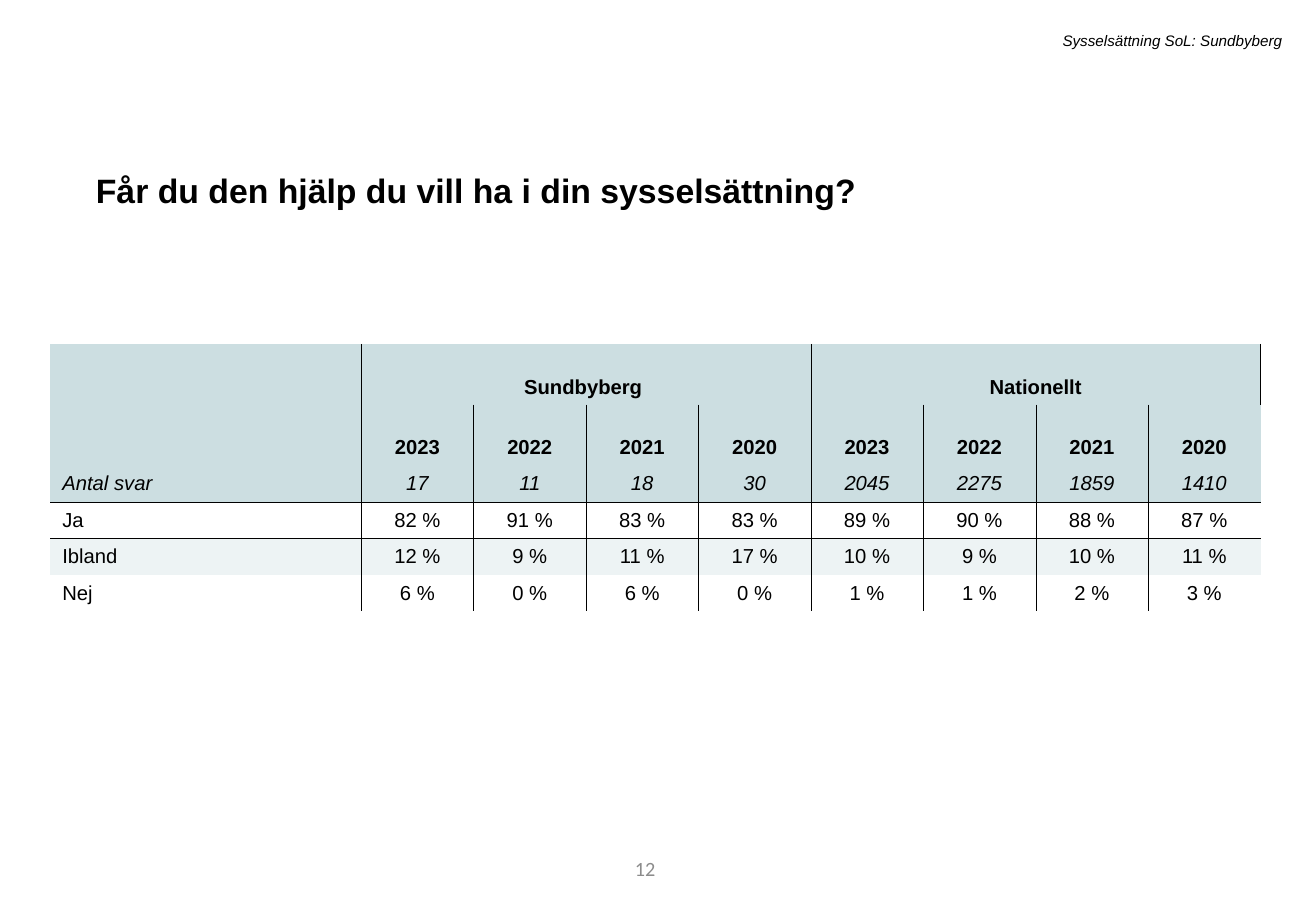
import pptx
import pptx.dml.color
import pptx.enum.text
import pptx.oxml.ns
import pptx.util
from lxml import etree

Cm, Pt = pptx.util.Cm, pptx.util.Pt
RGBColor = pptx.dml.color.RGBColor
Align = pptx.enum.text.PP_ALIGN
Anchor = pptx.enum.text.MSO_ANCHOR
AutoSize = pptx.enum.text.MSO_AUTO_SIZE
qn = pptx.oxml.ns.qn

BLACK = RGBColor(0x00, 0x00, 0x00)
GREY = RGBColor(0x8C, 0x8C, 0x8C)
HEADER_FILL = RGBColor(0xCC, 0xDE, 0xE1)
BAND_FILL = RGBColor(0xED, 0xF3, 0xF4)
PLAIN_STYLE = "{2D5ABB26-0587-4C30-8999-92F81FD0307C}"

SURVEY = "Sysselsättning SoL: Sundbyberg"
QUESTION = "Får du den hjälp du vill ha i din sysselsättning?"
PAGE = "12"
REGIONS = ["Sundbyberg ", "Nationellt"]
YEARS = ["2023", "2022", "2021", "2020"]
RESPONSES = ["Antal svar", "17", "11", "18", "30", "2045", "2275", "1859", "1410"]
ANSWERS = [
    ("Ja", [82, 91, 83, 83, 89, 90, 88, 87]),
    ("Ibland", [12, 9, 11, 17, 10, 9, 10, 11]),
    ("Nej", [6, 0, 6, 0, 1, 1, 2, 3]),
]

region_row = [""]
for region in REGIONS:
    region_row += [region] + [""] * (len(YEARS) - 1)
ROWS = [region_row, [""] + YEARS * len(REGIONS), RESPONSES]
ROWS += [[answer] + [f"{share} %" for share in shares] for answer, shares in ANSWERS]
RESPONSE_ROW = 2
LAST_COLUMN = len(RESPONSES) - 1
ROW_HEIGHTS = [1.27, 1.27] + [0.76] * (len(ROWS) - 2)
COLUMN_WIDTHS = [6.5] + [2.35] * LAST_COLUMN


def write(frame, text, size, align, font="Arial", color=BLACK, bold=False, italic=False):
    frame.text = text
    line = frame.paragraphs[0]
    line.alignment = align
    for run in line.runs:
        run.font.name = font
        run.font.size = Pt(size)
        run.font.color.rgb = color
        run.font.bold = bold
        run.font.italic = italic
    return line


def add_note(slide, place, text, size, anchor, **look):
    frame = slide.shapes.add_textbox(*map(Cm, place)).text_frame
    frame.word_wrap = True
    frame.vertical_anchor = anchor
    write(frame, text, size, Align.RIGHT, **look)


def draw_borders(cell, sides):
    properties = cell._tc.get_or_add_tcPr()
    for side in sides:
        border = etree.SubElement(properties, qn(f"a:ln{side}"), w=str(Pt(0.25)))
        fill = etree.SubElement(border, qn("a:solidFill"))
        etree.SubElement(fill, qn("a:srgbClr"), val=str(BLACK))


def border_sides(row, column):
    sides = ""
    if column > 0:
        sides += "L"
    if column < LAST_COLUMN or row == 0:
        sides += "R"
    if row == RESPONSE_ROW + 1:
        sides += "T"
    if row == RESPONSE_ROW:
        sides += "B"
    return sides


def fill_cell(cell, row, column):
    if not cell.is_spanned:
        draw_borders(cell, border_sides(row, column))
    if row <= RESPONSE_ROW:
        cell.fill.solid()
        cell.fill.fore_color.rgb = HEADER_FILL
    elif (row - RESPONSE_ROW) % 2 == 0:
        cell.fill.solid()
        cell.fill.fore_color.rgb = BAND_FILL
    else:
        cell.fill.background()
    cell.vertical_anchor = Anchor.BOTTOM if row < RESPONSE_ROW else Anchor.MIDDLE
    if ROWS[row][column]:
        write(cell.text_frame, ROWS[row][column], 12,
              Align.CENTER if column else Align.LEFT,
              bold=row < RESPONSE_ROW, italic=row == RESPONSE_ROW)


def add_results(slide):
    results = slide.shapes.add_table(
        len(ROWS), len(COLUMN_WIDTHS), Cm(1.05), Cm(7.19),
        Cm(sum(COLUMN_WIDTHS)), Cm(sum(ROW_HEIGHTS))).table
    results.first_row = results.horz_banding = False
    results._tbl.tblPr.find(qn("a:tableStyleId")).text = PLAIN_STYLE
    for column, width in zip(results.columns, COLUMN_WIDTHS):
        column.width = Cm(width)
    for row, height in zip(results.rows, ROW_HEIGHTS):
        row.height = Cm(height)
    for index in range(len(REGIONS)):
        first = 1 + index * len(YEARS)
        results.cell(0, first).merge(results.cell(0, first + len(YEARS) - 1))
    for row in range(len(ROWS)):
        for column in range(len(COLUMN_WIDTHS)):
            fill_cell(results.cell(row, column), row, column)


def main():
    deck = pptx.Presentation()
    deck.slide_width, deck.slide_height = Cm(27.51), Cm(19.05)
    slide = deck.slides.add_slide(deck.slide_layouts[5])

    question = slide.shapes.title
    question.left, question.top, question.width, question.height = map(
        Cm, (1.75, 3.25, 23.88, 1.19))
    question.text_frame.vertical_anchor = Anchor.TOP
    question.text_frame.auto_size = AutoSize.SHAPE_TO_FIT_TEXT
    line = write(question.text_frame, QUESTION, 20, Align.LEFT, bold=True)
    line.line_spacing = 1.2
    line.space_before = Pt(10)

    add_results(slide)
    add_note(slide, (4.55, 0.53, 22.5, 0.64), SURVEY, 9, Anchor.TOP, italic=True)
    add_note(slide, (7.75, 17.65, 6.2, 1.02), PAGE, 12, Anchor.MIDDLE,
             font="Calibri", color=GREY)
    deck.save("out.pptx")


if __name__ == "__main__":
    main()
